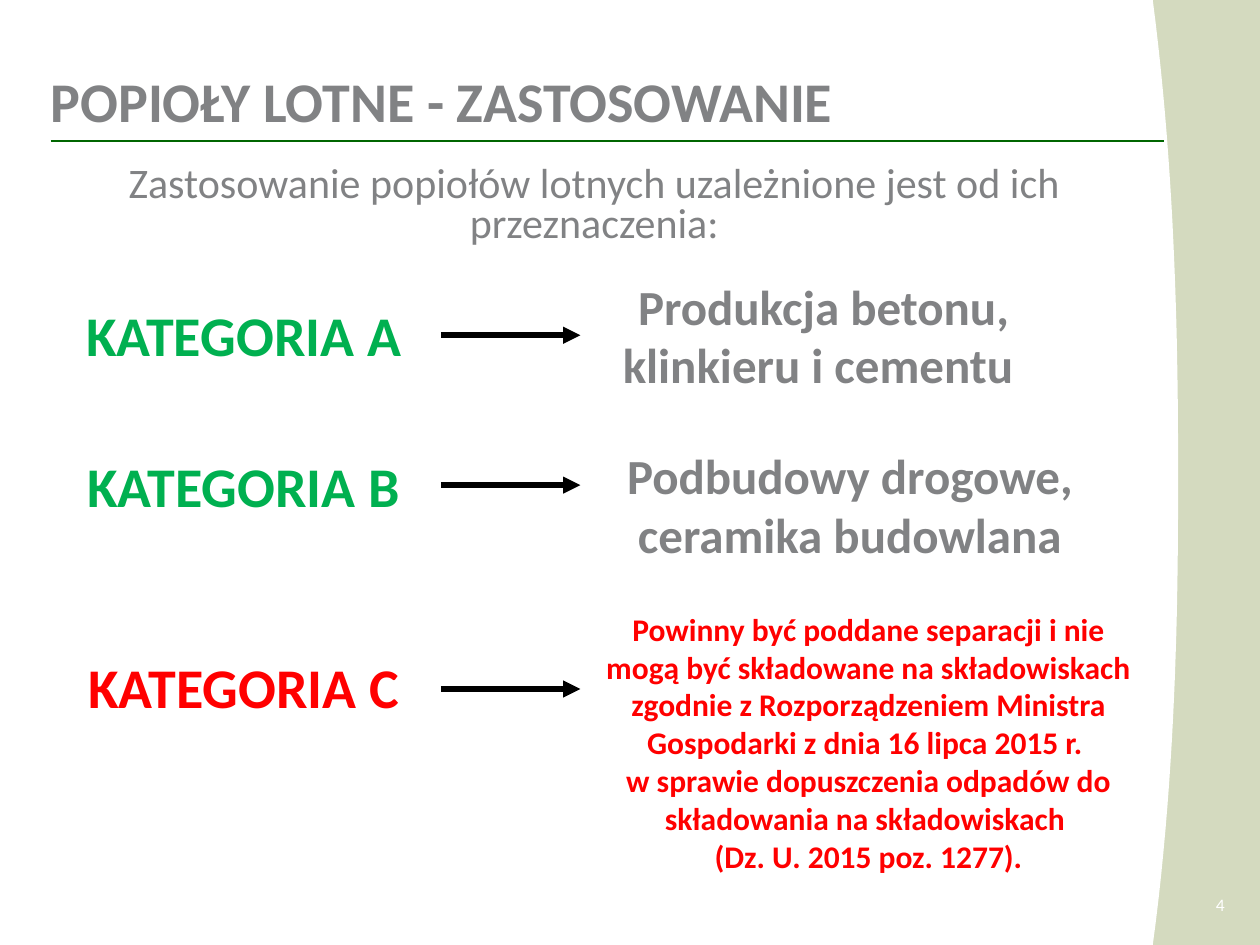
from pptx import Presentation
from pptx.util import Cm, Pt
from pptx.dml.color import RGBColor
from pptx.enum.shapes import MSO_CONNECTOR as Link
from pptx.enum.text import MSO_ANCHOR as Anchor, PP_ALIGN as Align
from pptx.oxml.ns import qn
from lxml.etree import SubElement

HUES = {"sage": "D4DABF", "white": "FFFFFF", "gray": "818284", "green": "00B050",
        "red": "FF0000", "rule": "006600", "black": "000000"}
TITLE = "POPIOŁY LOTNE - ZASTOSOWANIE"
INTRO = "Zastosowanie popiołów lotnych uzależnione jest od ich przeznaczenia:"
PAGE = "4"
ROWS = [
    {"name": "KATEGORIA A", "hue": "green", "top": 5.94, "arrow": 6.76,
     "use": ["Produkcja betonu, klinkieru i cementu "],
     "box": (10.8, 5.44, 11.6, 2.64), "size": 28, "tint": "gray"},
    {"name": "KATEGORIA B", "hue": "green", "top": 8.97, "arrow": 9.78,
     "use": ["Podbudowy drogowe, ceramika budowlana"],
     "box": (11.33, 8.86, 11.6, 2.64), "size": 28, "tint": "gray"},
    {"name": "KATEGORIA C", "hue": "red", "top": 13.03, "arrow": 13.89,
     "use": ["Powinny być poddane separacji i nie mogą być składowane na składowiskach "
             "zgodnie z Rozporządzeniem Ministra Gospodarki z dnia 16 lipca 2015 r. ",
             "w sprawie dopuszczenia odpadów do składowania na składowiskach ",
             "(Dz. U. 2015 poz. 1277)."],
     "box": (11.71, 12.17, 11.6, 5.64), "size": 18, "tint": "red"},
]
WIDE, HIGH = 25.4, 19.05
EDGE = [((23.24, 0), (23.72, 3.68), (23.75, 7.34), (23.75, 9.45)),
        ((23.75, 9.45), (23.75, 11.56), (23.75, 15.29), (23.24, HIGH))]
STEPS = 24


def paint(fill, hue):
    fill.solid()
    fill.fore_color.rgb = RGBColor.from_string(HUES[hue])


def curve(ends, t):
    parts = (1 - t) ** 3, 3 * t * (1 - t) ** 2, 3 * t * t * (1 - t), t ** 3
    return tuple(Cm(sum(w * p[i] for w, p in zip(parts, ends))) for i in (0, 1))


def write(shape, lines, size, hue, bold=False, align=Align.CENTER, space=None):
    frame = shape.text_frame
    frame.text = "\n".join(lines)
    for para in frame.paragraphs:
        para.alignment = align
        para.space_before = Pt(0)
        para.line_spacing = space
        for run in para.runs:
            font = run.font
            font.name, font.size, font.bold = "Calibri", Pt(size), bold
            font.color.rgb = RGBColor.from_string(HUES[hue])


def trim(frame):
    frame.margin_left = frame.margin_right = frame.margin_top = frame.margin_bottom = 0


def label(slide, box, lines, size, hue, wrap=True, **style):
    shape = slide.shapes.add_textbox(*map(Cm, box))
    shape.text_frame.word_wrap = wrap
    write(shape, lines, size, hue, **style)
    return shape


def connect(slide, kind, start, end, y, hue, width):
    line = slide.shapes.add_connector(kind, Cm(start), Cm(y), Cm(end), Cm(y))
    paint(line.line.fill, hue)
    line.line.width = Pt(width)
    SubElement(line._element.spPr, qn("a:effectLst"))
    return line


def main():
    deck = Presentation()
    deck.slide_width, deck.slide_height = Cm(WIDE), Cm(HIGH)
    slide = deck.slides.add_slide(deck.slide_layouts[5])
    paint(slide.background.fill, "sage")

    build = slide.shapes.build_freeform(0, 0)
    points = [curve(ends, n / STEPS) for ends in EDGE for n in range(STEPS + 1)]
    build.add_line_segments(points + [(0, Cm(HIGH))], close=True)
    panel = build.convert_to_shape()
    panel.shadow.inherit = False
    paint(panel.fill, "white")
    panel.line.fill.background()
    connect(slide, Link.STRAIGHT, 1.02, 23.47, 2.84, "rule", 1)

    title = slide.shapes.title
    slide.shapes._spTree.append(title._element)
    title.left, title.top, title.width, title.height = map(Cm, (1.02, 1.57, 20.42, 1.12))
    paint(title.fill, "white")
    trim(title.text_frame)
    title.text_frame.vertical_anchor = Anchor.BOTTOM
    write(title, [TITLE], 32, "gray", bold=True, align=Align.LEFT, space=0.8)

    intro = label(slide, (1.02, 3.35, 21.92, 13.94), [INTRO], 24, "gray", space=0.8)
    paint(intro.fill, "white")
    trim(intro.text_frame)

    for row in ROWS:
        label(slide, (1.32, row["top"], 7.19, 1.63), [row["name"]], 32, row["hue"], bold=True)
        arrow = connect(slide, Link.ELBOW, 8.89, 11.7, row["arrow"], "black", 3.25)
        SubElement(arrow.line._get_or_add_ln(), qn("a:tailEnd"), type="triangle")
        label(slide, row["box"], row["use"], row["size"], row["tint"], bold=True)

    page = label(slide, (24.08, 18.08, 0.61, 0.38), [PAGE], 10, "white",
                 wrap=False, align=Align.RIGHT, space=0.9)
    trim(page.text_frame)
    deck.save("out.pptx")


if __name__ == "__main__":
    main()
